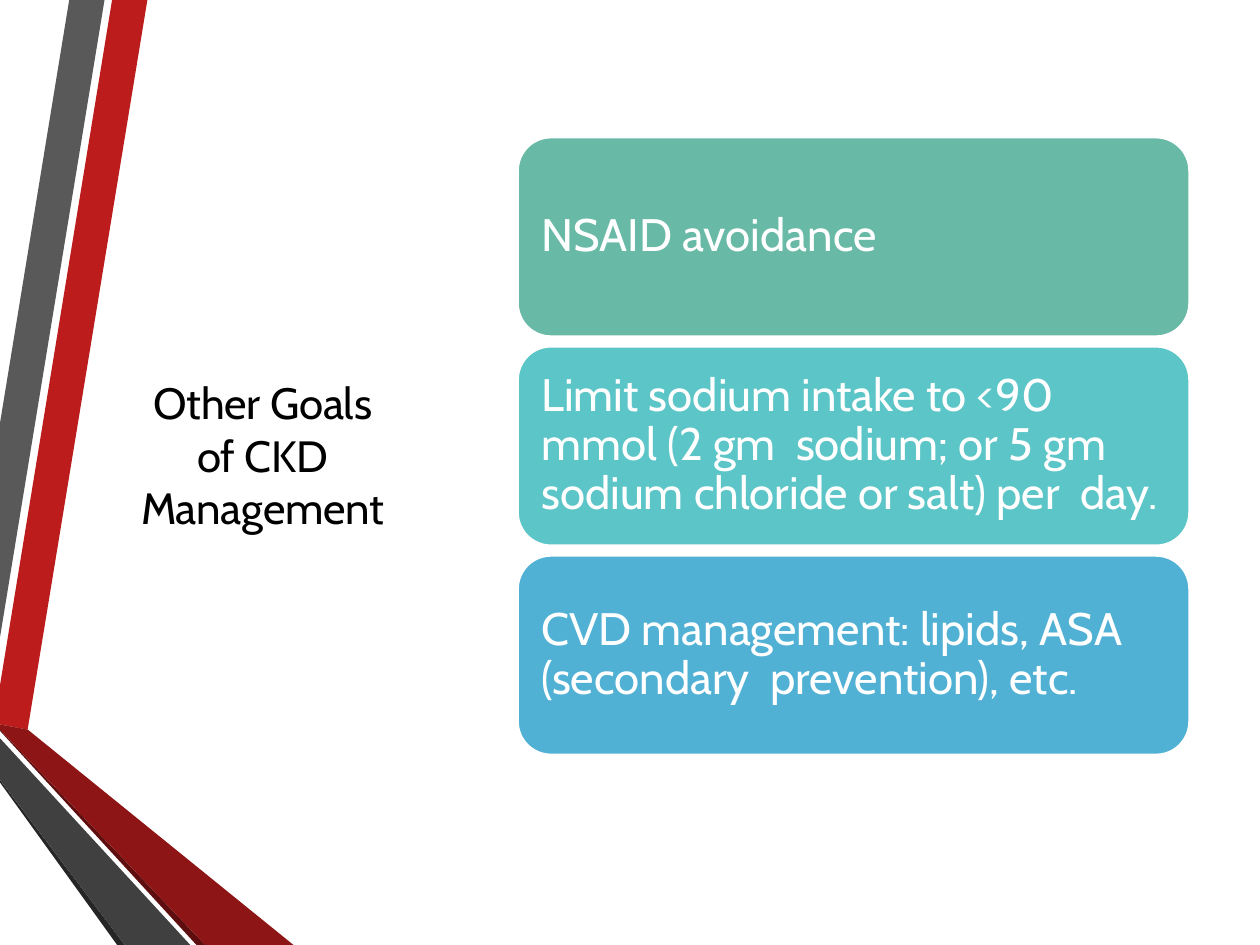
"""Build a slide of CKD management goals beside a ribbon decoration."""
from pptx import Presentation
from pptx.dml.color import RGBColor
from pptx.enum.shapes import MSO_SHAPE
from pptx.enum.text import MSO_ANCHOR, MSO_AUTO_SIZE, PP_ALIGN
from pptx.util import Inches, Pt

ROUNDED = MSO_SHAPE.ROUNDED_RECTANGLE
MIDDLE = MSO_ANCHOR.MIDDLE
NO_FIT = MSO_AUTO_SIZE.NONE
LEFT, CENTER = PP_ALIGN.LEFT, PP_ALIGN.CENTER

WIDTH, HEIGHT = 10, 7.5
FONT = "Cabin"
COLORS = {
    "red": "BC1C1C", "gray": "595959", "black": "262626", "maroon": "5E0E0E",
    "dark red": "8D1515", "dark gray": "404040", "green": "68B9A6",
    "teal": "5CC5C7", "blue": "50B1D4", "white": "FFFFFF", "ink": "000000",
}
TITLE = "Other Goals of CKD Management"
GOALS = [
    ("NSAID avoidance", "green"),
    ("Limit sodium intake to <90 mmol (2 gm  sodium; or 5 gm sodium chloride or salt) per  day.", "teal"),
    ("CVD management: lipids, ASA (secondary  prevention), etc.", "blue"),
]
RIBBONS = [
    ("red", [(0, 5.44), (0, 5.75), (0.22, 5.79), (1.17, 0), (0.89, 0)]),
    ("gray", [(0.83, 0), (0.55, 0), (0, 3.36), (0, 5.06)]),
    ("black", [(0, 6.19), (0, 6.21), (0.93, HEIGHT), (0.99, HEIGHT)]),
    ("maroon", [(0, 5.79), (0, 5.8), (1.56, HEIGHT), (1.63, HEIGHT)]),
    ("dark red", [(0, 5.79), (1.63, HEIGHT), (2.33, HEIGHT), (0.22, 5.79), (0, 5.75)]),
    ("dark gray", [(0, 6.19), (0.99, HEIGHT), (1.51, HEIGHT), (0, 5.86)]),
]
CARD_LEFT, CARD_TOP, CARD_WIDTH, CARD_HEIGHT, CARD_PITCH = 4.11, 1.09, 5.33, 1.58, 1.66


def rgb(color):
    return RGBColor.from_string(COLORS[color])


def write(shape, text, size, color, align=LEFT, inset=0.1, line_spacing=1.0, tracking=0):
    frame = shape.text_frame
    frame.word_wrap = True
    frame.auto_size = NO_FIT
    frame.vertical_anchor = MIDDLE
    frame.margin_left = frame.margin_right = Inches(inset)
    frame.margin_top = frame.margin_bottom = Inches(inset)
    paragraph = frame.paragraphs[0]
    paragraph.alignment = align
    paragraph.line_spacing = line_spacing
    run = paragraph.add_run()
    run.text = text
    run.font.name = FONT
    run.font.size = Pt(size)
    run.font.color.rgb = rgb(color)
    run.font._element.set("spc", str(round(tracking * 100)))


def paint(shape, color):
    shape.shadow.inherit = False
    shape.fill.solid()
    shape.fill.fore_color.rgb = rgb(color)
    shape.line.fill.background()


def main():
    deck = Presentation()
    deck.slide_width, deck.slide_height = Inches(WIDTH), Inches(HEIGHT)
    slide = deck.slides.add_slide(deck.slide_layouts[5])
    shapes = slide.shapes

    for color, outline in RIBBONS:
        points = [(Inches(x), Inches(y)) for x, y in outline]
        builder = shapes.build_freeform(*points[0])
        builder.add_line_segments(points[1:], close=True)
        paint(builder.convert_to_shape(), color)

    title = shapes.title
    title.left, title.top = Inches(1), Inches(0.82)
    title.width, title.height = Inches(2.17), Inches(5.58)
    write(title, TITLE, 25, "ink", align=CENTER, tracking=-0.1)

    for row, (goal, color) in enumerate(GOALS):
        card = shapes.add_shape(
            ROUNDED, Inches(CARD_LEFT), Inches(CARD_TOP + row * CARD_PITCH),
            Inches(CARD_WIDTH), Inches(CARD_HEIGHT))
        paint(card, color)
        card.line.color.rgb = rgb("white")
        card.line.width = Pt(1.25)
        write(card, goal, 26, "white", inset=0.11, line_spacing=0.9)

    deck.save("out.pptx")


if __name__ == "__main__":
    main()
